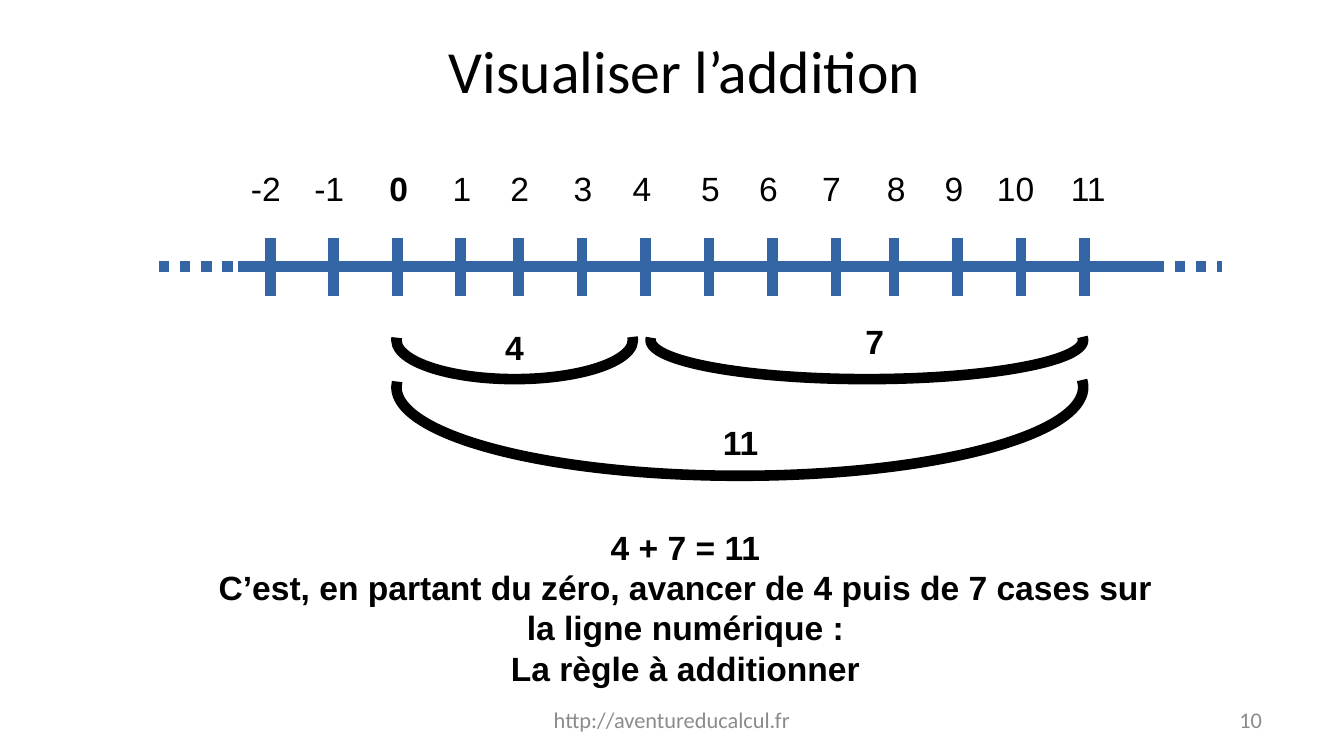
"""Build a slide that shows addition as moves along a number line."""
from collections import namedtuple

from lxml import etree
from pptx import Presentation
from pptx.dml.color import RGBColor
from pptx.enum import dml, shapes, text
from pptx.oxml.ns import qn
from pptx.util import Pt

Box = namedtuple("Box", "left top width height")

BLACK, BLUE, GREY = "000000", "3465A4", "8B8B8B"
STROKE = 5.67
LABEL_LEFTS = [0, 33.9, 74.2, 108, 139, 172.8, 204.5,
               241.2, 272.2, 306, 340.6, 371.6, 399.6, 439.2]
LABEL_SIZES = {"-2": (33, 47), "-1": (33, 47), "10": (39, 47), "11": (42, 47)}
DIGIT_SIZE = (28, 27)


def paint(color_format, value):
    """Set a colour from a hex string."""
    color_format.rgb = RGBColor.from_string(value)


def add_text(page, box, lines, size=18, font="Arial", color=BLACK, bold=False,
             align=text.PP_ALIGN.LEFT, anchor=text.MSO_ANCHOR.TOP):
    """Place a text box with one paragraph for each line."""
    frame = page.shapes.add_textbox(*map(Pt, box)).text_frame
    frame.word_wrap = True
    frame.vertical_anchor = anchor
    frame.text = "\n".join(lines)
    for para in frame.paragraphs:
        para.alignment = align
        para.font.size = Pt(size)
        para.font.name = font
        para.font.bold = bold
        paint(para.font.color, color)


def add_line(page, start, end, dash=None):
    """Draw a thick blue line without a shadow."""
    line = page.shapes.add_connector(
        shapes.MSO_CONNECTOR.STRAIGHT, *map(Pt, start + end))
    line.line.width = Pt(STROKE)
    paint(line.line.color, BLUE)
    if dash:
        line.line.dash_style = dash
    etree.SubElement(line._element.spPr, qn("a:effectLst"))


def add_arc(page, box, start, end):
    """Draw a black arc between two angles in degrees."""
    arc = page.shapes.add_shape(shapes.MSO_SHAPE.ARC, *map(Pt, box))
    arc.adjustments[0], arc.adjustments[1] = start * 0.6, end * 0.6
    arc.shadow.inherit = False
    arc.fill.background()
    arc.line.width = Pt(STROKE)
    paint(arc.line.color, BLACK)


def add_number_line(page, box):
    """Draw the axis, its ticks and its dotted ends."""
    middle = box.top + box.height / 2
    right = box.left + box.width
    add_line(page, (box.left + 42.5, middle), (right - 31, middle))
    for index in range(14):
        x = box.left + 59.8 + 34.02 * index - 3 * (index > 3) - 3 * (index > 9)
        add_line(page, (x, box.top + box.height), (x, box.top))
    add_line(page, (box.left, middle), (right, middle),
             dml.MSO_LINE.ROUND_DOT)


def add_labels(page, box):
    """Write the numbers above the ticks, with zero in bold."""
    for number, left in enumerate(LABEL_LEFTS, start=-2):
        label = str(number)
        size = LABEL_SIZES.get(label, DIGIT_SIZE)
        add_text(page, Box(box.left + left, box.top, *size), [label],
                 bold=number == 0)


def add_moves(page, box):
    """Draw the arcs of the two terms and of their sum, with their values."""
    moves = [
        ("4", Box(0, 1.4, 126.7, 41.8), (358.45, 181.2), (51.1, 11.5)),
        ("7", Box(136.1, 1.4, 231.8, 41.8), (359.15, 180.65), (244.1, 8.6)),
        ("11", Box(0, 0, 367.9, 95), (358.8, 180.93), (167.8, 62.6)),
    ]
    for value, arc, angles, (left, top) in moves:
        add_arc(page, Box(box.left + arc.left, box.top + arc.top,
                          arc.width, arc.height), *angles)
        size = LABEL_SIZES.get(value, DIGIT_SIZE)
        add_text(page, Box(box.left + left, box.top + top, *size), [value],
                 bold=True)


def add_footer(page, box):
    """Write the web address and the page number."""
    style = {"size": 12, "font": "Calibri", "color": GREY,
             "anchor": text.MSO_ANCHOR.MIDDLE}
    add_text(page, Box(box.left, box.top, 227.5, box.height),
             ["http://aventureducalcul.fr"],
             align=text.PP_ALIGN.CENTER, **style)
    add_text(page, Box(box.left + box.width - 167, box.top, 167, box.height),
             ["10"], align=text.PP_ALIGN.RIGHT, **style)


def main():
    """Build and save the deck."""
    deck = Presentation()
    deck.slide_width, deck.slide_height = Pt(720), Pt(405)
    page = deck.slides.add_slide(deck.slide_layouts[6])
    add_text(page, Box(46.8, 3.6, 647.3, 67), ["Visualiser l’addition "],
             size=32, font="Calibri", align=text.PP_ALIGN.CENTER,
             anchor=text.MSO_ANCHOR.MIDDLE)
    add_number_line(page, Box(85, 127.4, 569.5, 31))
    add_labels(page, Box(127.4, 86.4, 481, 47))
    add_moves(page, Box(212.4, 159.9, 367.9, 95))
    add_text(page, Box(105.1, 278.6, 524.2, 89.3), [
        "4 + 7 = 11",
        "C’est, en partant du zéro, avancer de 4 puis de 7 cases sur "
        "la ligne numérique :",
        "La règle à additionner",
    ], bold=True, align=text.PP_ALIGN.CENTER)
    add_footer(page, Box(246.2, 375.1, 437, 21))
    deck.save("out.pptx")


if __name__ == "__main__":
    main()
